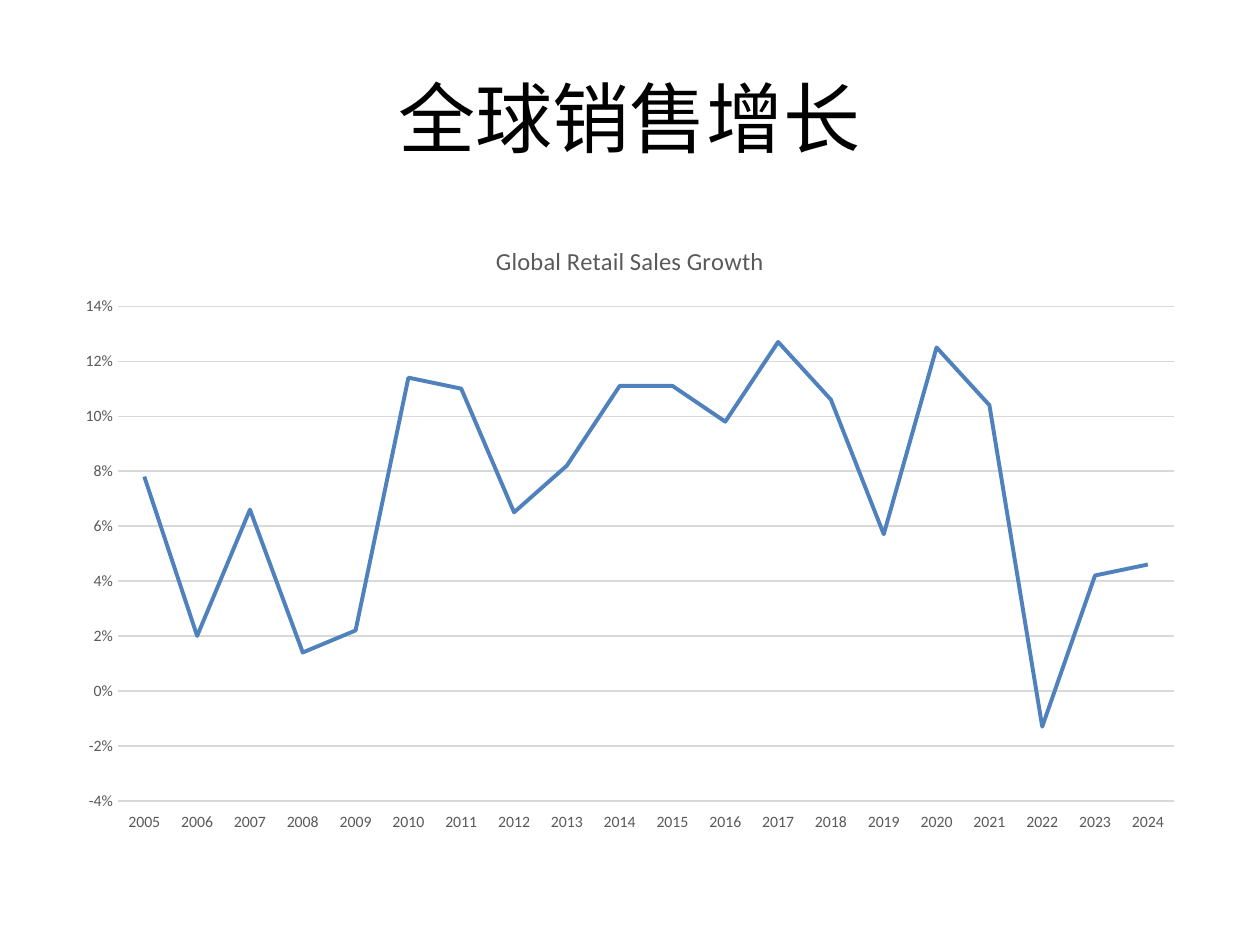
from dataclasses import dataclass

from pptx import Presentation
from pptx.chart.data import CategoryChartData
from pptx.dml.color import RGBColor
from pptx.enum.chart import XL_CHART_TYPE, XL_MARKER_STYLE, XL_TICK_LABEL_POSITION, XL_TICK_MARK
from pptx.enum.text import MSO_ANCHOR, PP_ALIGN
from pptx.util import Inches, Pt

LINE = XL_CHART_TYPE.LINE
NO_MARKER = XL_MARKER_STYLE.NONE
LOW = XL_TICK_LABEL_POSITION.LOW
NO_TICK = XL_TICK_MARK.NONE
MIDDLE = MSO_ANCHOR.MIDDLE
CENTER = PP_ALIGN.CENTER

TITLE = "全球销售增长"
CHART_TITLE = "Global Retail Sales Growth"
FIRST_YEAR = 2005
GROWTH = [
    0.078, 0.02, 0.066, 0.014, 0.022, 0.114, 0.11, 0.065, 0.082, 0.111,
    0.111, 0.098, 0.127, 0.106, 0.057, 0.125, 0.104, -0.013, 0.042, 0.046,
]


@dataclass(frozen=True)
class Theme:
    font: str = "Calibri"
    black: str = "000000"
    gray: str = "595959"
    grid: str = "D9D9D9"
    blue: str = "4F81BD"
    title: float = 44
    chart_title: float = 14
    chart: float = 10
    axis: float = 9
    hairline: float = 0.75
    series: float = 2.25


THEME = Theme()


def set_font(font, size, color):
    font.name = THEME.font
    font.size = Pt(size)
    font.bold = False
    font.color.rgb = RGBColor.from_string(color)


def set_line(line, color, width):
    line.color.rgb = RGBColor.from_string(color)
    line.width = Pt(width)


def add_title(slide):
    box = slide.shapes.add_textbox(Inches(0.5), Inches(0.3), Inches(9), Inches(1.25))
    tf = box.text_frame
    tf.word_wrap = True
    tf.vertical_anchor = MIDDLE
    p = tf.paragraphs[0]
    p.text = TITLE
    p.alignment = CENTER
    set_font(p.font, THEME.title, THEME.black)


def add_growth_chart(slide):
    data = CategoryChartData(number_format="0%")
    data.categories = [str(FIRST_YEAR + i) for i in range(len(GROWTH))]
    data.add_series(CHART_TITLE, GROWTH)
    chart = slide.shapes.add_chart(
        LINE, Inches(0.5), Inches(1.75), Inches(9), Inches(4.95), data
    ).chart
    set_font(chart.font, THEME.chart, THEME.black)
    chart.has_legend = False
    chart.has_title = True
    p = chart.chart_title.text_frame.paragraphs[0]
    p.text = CHART_TITLE
    set_font(p.font, THEME.chart_title, THEME.gray)
    chart.chart_title.include_in_layout = False

    years, rates = chart.category_axis, chart.value_axis
    for axis in (years, rates):
        axis.major_tick_mark = axis.minor_tick_mark = NO_TICK
        set_font(axis.tick_labels.font, THEME.axis, THEME.gray)
    years.tick_label_position = LOW
    set_line(years.format.line, THEME.grid, THEME.hairline)
    rates.minimum_scale, rates.maximum_scale, rates.major_unit = -0.04, 0.14, 0.02
    rates.tick_labels.number_format = "0%"
    rates.tick_labels.number_format_is_linked = False
    rates.format.line.fill.background()
    set_line(rates.major_gridlines.format.line, THEME.grid, THEME.hairline)

    plot = chart.plots[0]
    plot.vary_by_categories = False
    series = plot.series[0]
    series.smooth = False
    series.marker.style = NO_MARKER
    set_line(series.format.line, THEME.blue, THEME.series)


def main():
    prs = Presentation()
    prs.slide_width, prs.slide_height = Inches(10), Inches(7.5)
    slide = prs.slides.add_slide(prs.slide_layouts[6])
    add_title(slide)
    add_growth_chart(slide)
    prs.save("out.pptx")


if __name__ == "__main__":
    main()
